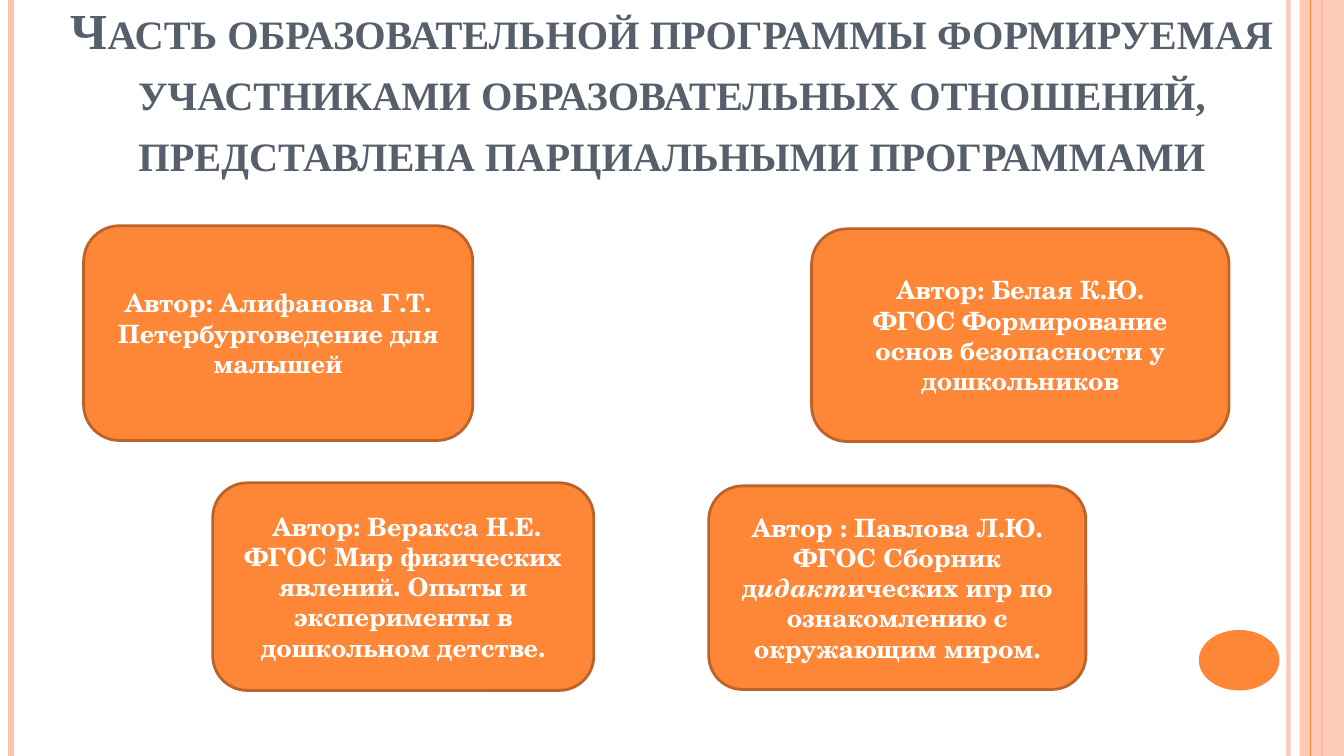
from dataclasses import dataclass

from lxml import etree
from pptx import Presentation
from pptx.dml.color import RGBColor
from pptx.enum.shapes import MSO_CONNECTOR, MSO_SHAPE
from pptx.enum.text import MSO_ANCHOR, PP_ALIGN
from pptx.oxml.ns import qn
from pptx.util import Emu, Pt

PX = 9144  # EMU, 100 px to the inch
WIDTH, HEIGHT = 1333, 750
STRAIGHT = MSO_CONNECTOR.STRAIGHT
RECT, OVAL, ROUNDED = MSO_SHAPE.RECTANGLE, MSO_SHAPE.OVAL, MSO_SHAPE.ROUNDED_RECTANGLE
MIDDLE, BOTTOM = MSO_ANCHOR.MIDDLE, MSO_ANCHOR.BOTTOM
CENTER = PP_ALIGN.CENTER
COLORS = {
    "peach": "FEC3AE",
    "orange": "FE8637",
    "border": "BC6329",
    "title": "575F6D",
    "white": "FFFFFF",
}
TITLE = ("Часть образовательной программы формируемая участниками "
         "образовательных отношений, представлена парциальными программами")


@dataclass(frozen=True)
class Stripe:
    x: int
    color: str
    weight: float
    opacity: int = 100


@dataclass(frozen=True)
class Run:
    text: str
    italic: bool = False


@dataclass(frozen=True)
class Card:
    x: int
    y: int
    w: int
    h: int
    author: str
    program: tuple[Run, ...]


STRIPES = (
    Stripe(1278, "peach", 3, 93),
    Stripe(11, "peach", 4.5),
    Stripe(1311, "orange", 1.5),
)
INNER_STRIPE = Stripe(1300, "orange", 0.75)
CARDS = (
    Card(83, 224, 386, 213, "Автор: Алифанова Г.Т.",
         (Run("Петербурговедение для малышей"),)),
    Card(211, 479, 378, 206, " Автор: Веракса Н.Е.",
         (Run("ФГОС Мир физических явлений. Опыты и эксперименты "
              "в дошкольном детстве."),)),
    Card(805, 227, 414, 211, "Автор: Белая К.Ю.",
         (Run("ФГОС Формирование основ безопасности у дошкольников"),)),
    Card(703, 482, 374, 202, "Автор : Павлова Л.Ю.",
         (Run("ФГОС Сборник д"), Run("идакт", True),
          Run("ических игр по ознакомлению с окружающим миром."))),
)


def px(n: int) -> Emu:
    return Emu(n * PX)


def rgb(name: str) -> RGBColor:
    return RGBColor.from_string(COLORS[name])


def set_opacity(fill, percent: int) -> None:
    """Add an alpha value to a solid fill, given the element that holds it."""
    clr = next(fill.iter(qn("a:srgbClr")))
    etree.SubElement(clr, qn("a:alpha")).set("val", str(percent * 1000))


def add_stripe(s, stripe: Stripe) -> None:
    line = s.shapes.add_connector(STRAIGHT, px(stripe.x), 0, px(stripe.x), px(HEIGHT))
    line.line.color.rgb = rgb(stripe.color)
    line.line.width = Pt(stripe.weight)
    sp_pr = line._element.spPr
    if stripe.opacity < 100:
        set_opacity(sp_pr, stripe.opacity)
    etree.SubElement(sp_pr, qn("a:effectLst"))


def add_filled(s, kind, x: int, y: int, w: int, h: int, color: str):
    sp = s.shapes.add_shape(kind, px(x), px(y), px(w), px(h))
    sp.shadow.inherit = False
    sp.fill.solid()
    sp.fill.fore_color.rgb = rgb(color)
    sp.line.fill.background()
    return sp


def add_run(p, text: str, font: str, size: int, color: str, italic: bool = False):
    r = p.add_run()
    r.text = text
    r.font.name = font
    r.font.size = Pt(size)
    r.font.bold = True
    r.font.italic = italic
    r.font.color.rgb = rgb(color)
    return r


def add_title(s) -> None:
    tf = s.shapes.add_textbox(px(26), px(40), px(1281), px(145)).text_frame
    tf.word_wrap = True
    tf.vertical_anchor = BOTTOM
    p = tf.paragraphs[0]
    p.alignment = CENTER
    p.line_spacing = Pt(43.5)
    r = add_run(p, TITLE, "Times New Roman", 36, "title")
    r.font._element.set("cap", "small")


def add_card(s, card: Card) -> None:
    sp = add_filled(s, ROUNDED, card.x, card.y, card.w, card.h, "orange")
    sp.line.color.rgb = rgb("border")
    sp.line.width = Pt(2)
    tf = sp.text_frame
    tf.word_wrap = True
    tf.vertical_anchor = MIDDLE
    for p, runs in ((tf.paragraphs[0], (Run(card.author),)),
                    (tf.add_paragraph(), card.program)):
        p.alignment = CENTER
        for run in runs:
            add_run(p, run.text, "TeX Gyre Schola", 18, "white", run.italic)


def main() -> None:
    prs = Presentation()
    prs.slide_width, prs.slide_height = px(WIDTH), px(HEIGHT)
    s = prs.slides.add_slide(prs.slide_layouts[6])

    for stripe in STRIPES:
        add_stripe(s, stripe)
    band = add_filled(s, RECT, 1289, 0, WIDTH - 1289, HEIGHT, "peach")
    set_opacity(band._element.spPr, 87)
    add_stripe(s, INNER_STRIPE)
    add_filled(s, OVAL, 1189, 625, 80, 60, "orange")

    add_title(s)
    for card in CARDS:
        add_card(s, card)
    prs.save("out.pptx")


if __name__ == "__main__":
    main()
